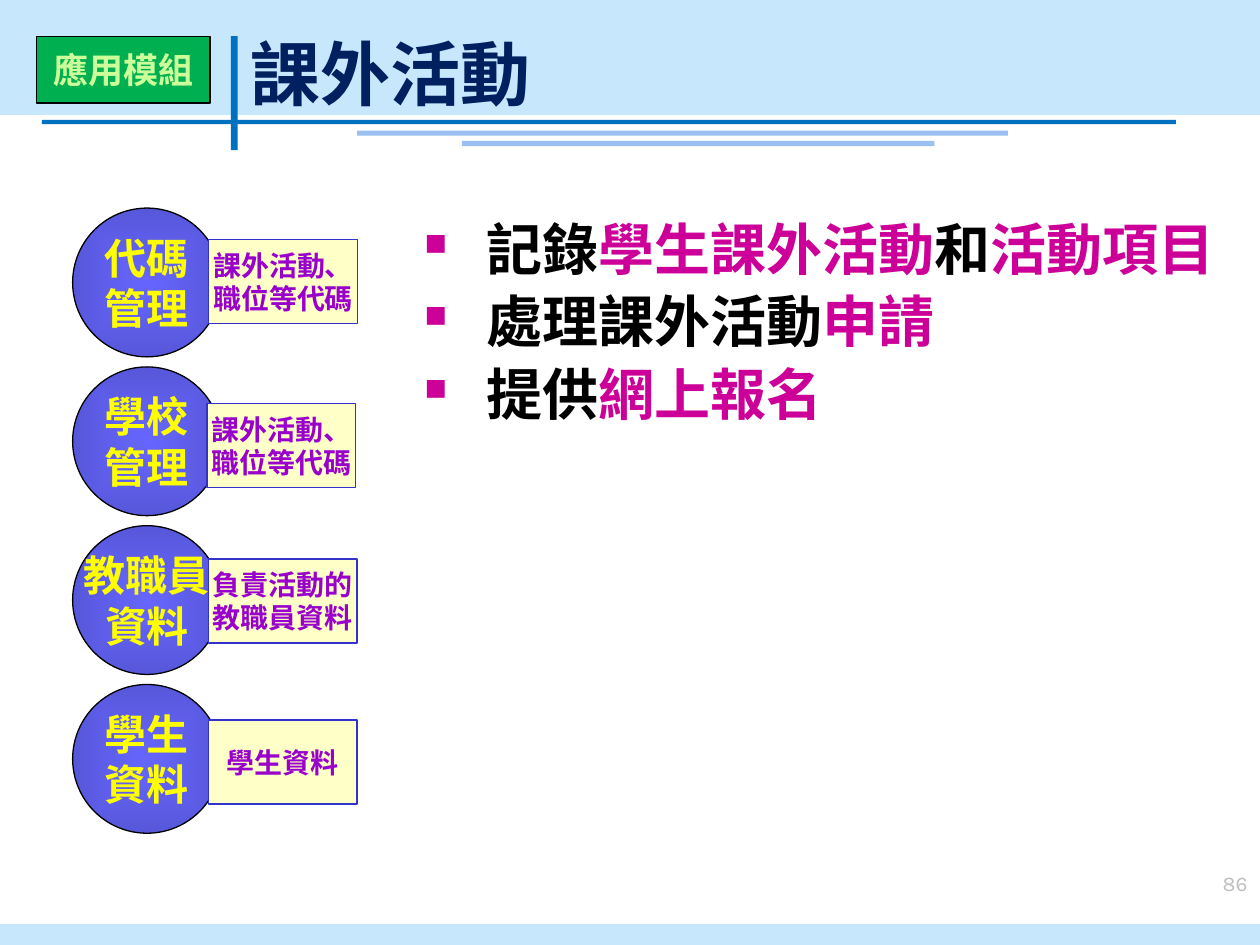
from dataclasses import dataclass

import pptx
import pptx.dml.color
import pptx.enum.shapes
import pptx.enum.text
import pptx.oxml
import pptx.oxml.ns
import pptx.util

Pt = pptx.util.Pt
SHAPES = pptx.enum.shapes.MSO_SHAPE
ALIGN = pptx.enum.text.PP_ALIGN
ANCHOR = pptx.enum.text.MSO_ANCHOR


@dataclass(frozen=True)
class Theme:
    """Colours, fonts and type sizes of the slide."""
    font: str = "Noto Sans CJK SC"
    number_font: str = "Karla"
    band: str = "C7E7FD"
    rule: str = "0070C0"
    soft_rule: str = "9ABFF0"
    title: str = "002060"
    black: str = "000000"
    accent: str = "CC0099"
    number: str = "BFBFBF"
    tag_fill: str = "00B050"
    tag_text: str = "CCFF99"
    circle_inner: str = "6666FF"
    circle_outer: str = "5757DA"
    circle_text: str = "FFFF00"
    note_fill: str = "FFFFC8"
    note_line: str = "3333CC"
    note_text: str = "9900CC"
    title_size: int = 40
    bullet_size: int = 32
    circle_size: int = 24
    tag_size: int = 20
    note_size: int = 16
    number_size: int = 12


THEME = Theme()


def rgb(value):
    """Turn a hex string into a colour."""
    return pptx.dml.color.RGBColor.from_string(value)


def add_xml(parent, markup):
    """Append DrawingML elements to a parent."""
    namespace = pptx.oxml.ns.nsdecls("a")
    for element in list(pptx.oxml.parse_xml(f"<a:group {namespace}>{markup}</a:group>")):
        parent.append(element)


def style(paragraph, size, color, align=ALIGN.LEFT, font=THEME.font, bold=True):
    """Set the font and alignment of a paragraph."""
    paragraph.alignment = align
    paragraph.font.size = Pt(size)
    paragraph.font.bold = bold
    paragraph.font.color.rgb = rgb(color)
    paragraph.font.name = font
    add_xml(paragraph.font._element, f'<a:ea typeface="{font}"/>')


def add_box(slide, box, fill, line=None, kind=SHAPES.RECTANGLE):
    """Draw a flat shape in a box of left, top, width and height."""
    shape = slide.shapes.add_shape(kind, *map(Pt, box))
    shape.shadow.inherit = False
    shape.fill.solid()
    shape.fill.fore_color.rgb = rgb(fill)
    if line:
        shape.line.color.rgb = rgb(line)
        shape.line.width = Pt(0.75)
    else:
        shape.line.fill.background()
    return shape


def write(shape, lines, size, color, align=ALIGN.CENTER, anchor=ANCHOR.MIDDLE,
          wrap=False, **font):
    """Write lines of one style in a shape."""
    frame = shape.text_frame
    frame.word_wrap = wrap
    frame.vertical_anchor = anchor
    frame.text = "\n".join(lines)
    for paragraph in frame.paragraphs:
        style(paragraph, size, color, align, **font)


def add_backdrop(slide, width, height):
    """Draw the bands and rules behind the content."""
    add_box(slide, (0, 0, width, 65.7), THEME.band)
    add_box(slide, (0, height - 12, width, 12), THEME.band)
    add_box(slide, (132, 20.6, 3.8, 65.2), THEME.rule)
    add_box(slide, (24, 68.5, 648, 2.4), THEME.rule)
    add_box(slide, (204, 74.6, 372, 3), THEME.soft_rule)
    add_box(slide, (264, 80.5, 270, 3), THEME.soft_rule)


def add_heading(slide, left, top):
    """Place the module tag and the slide title."""
    tag = add_box(slide, (left, top, 99.3, 38), THEME.tag_fill, THEME.black)
    write(tag, ["應用模組"], THEME.tag_size, THEME.tag_text)
    title = slide.shapes.add_textbox(*map(Pt, (left + 115.3, top - 11.4, 201.6, 59.8)))
    write(title, ["課外活動"], THEME.title_size, THEME.title, ALIGN.LEFT,
          ANCHOR.BOTTOM, wrap=True)


def add_source(slide, left, top, name, note, shift):
    """Place a data source circle with its note overlapping on the right."""
    circle = add_box(slide, (left, top, 85, 85), THEME.circle_inner, THEME.black, SHAPES.OVAL)
    circle.fill.gradient()
    for stop, color in zip(circle.fill.gradient_stops,
                           (THEME.circle_inner, THEME.circle_outer)):
        stop.color.rgb = rgb(color)
    gradient = circle._element.spPr.find(pptx.oxml.ns.qn("a:gradFill"))
    gradient.remove(gradient.find(pptx.oxml.ns.qn("a:lin")))
    add_xml(gradient, '<a:path path="shape"><a:fillToRect l="50000" t="50000" '
                      'r="50000" b="50000"/></a:path>')
    write(circle, name, THEME.circle_size, THEME.circle_text)
    shift_x, shift_y = shift
    box = add_box(slide, (left + shift_x, top + shift_y, 85, 48),
                  THEME.note_fill, THEME.note_line)
    write(box, note, THEME.note_size, THEME.note_text)


def add_sources(slide, left, top, pitch):
    """Stack the data sources at an equal pitch."""
    codes = ("課外活動、", "職位等代碼")
    sources = (
        (("代碼", "管理"), codes, (77.8, 18)),
        (("學校", "管理"), codes, (76.8, 21)),
        (("教職員", "資料"), ("負責活動的", "教職員資料"), (77.5, 19)),
        (("學生", "資料"), ("學生資料",), (77.5, 20.3)),
    )
    for index, (name, note, shift) in enumerate(sources):
        add_source(slide, left, top + index * pitch, name, note, shift)


def add_bullets(slide, box):
    """List the functions, with alternating black and accent runs."""
    items = (("記錄", "學生課外活動", "和", "活動項目"),
             ("處理課外活動", "申請"),
             ("提供", "網上報名"))
    frame = slide.shapes.add_textbox(*map(Pt, box)).text_frame
    frame.word_wrap = True
    for index, parts in enumerate(items):
        paragraph = frame.add_paragraph() if index else frame.paragraphs[0]
        if index:
            paragraph.space_before = Pt(3)
        properties = paragraph._p.get_or_add_pPr()
        properties.set("marL", str(Pt(35.3)))
        properties.set("indent", str(-Pt(35.3)))
        add_xml(properties, f'<a:buClr><a:srgbClr val="{THEME.accent}"/></a:buClr>'
                            '<a:buSzPct val="55000"/><a:buChar char="■"/>')
        style(paragraph, THEME.bullet_size, THEME.black)
        for position, part in enumerate(parts):
            run = paragraph.add_run()
            run.text = part
            if position % 2:
                run.font.color.rgb = rgb(THEME.accent)


def add_page_number(slide, box):
    """Write the page number at the lower right."""
    shape = slide.shapes.add_textbox(*map(Pt, box))
    write(shape, ["86"], THEME.number_size, THEME.number, ALIGN.RIGHT, ANCHOR.TOP,
          wrap=True, font=THEME.number_font, bold=False)


def main():
    """Build the slide and save it."""
    presentation = pptx.Presentation()
    presentation.slide_width, presentation.slide_height = Pt(720), Pt(540)
    slide = presentation.slides.add_slide(presentation.slide_layouts[6])
    add_backdrop(slide, 720, 540)
    add_heading(slide, 20.8, 20.8)
    add_bullets(slide, (235.4, 118.8, 476, 383))
    add_page_number(slide, (598.3, 494, 121.7, 36))
    add_sources(slide, 41.5, 118.9, 90.75)
    presentation.save("out.pptx")


if __name__ == "__main__":
    main()
